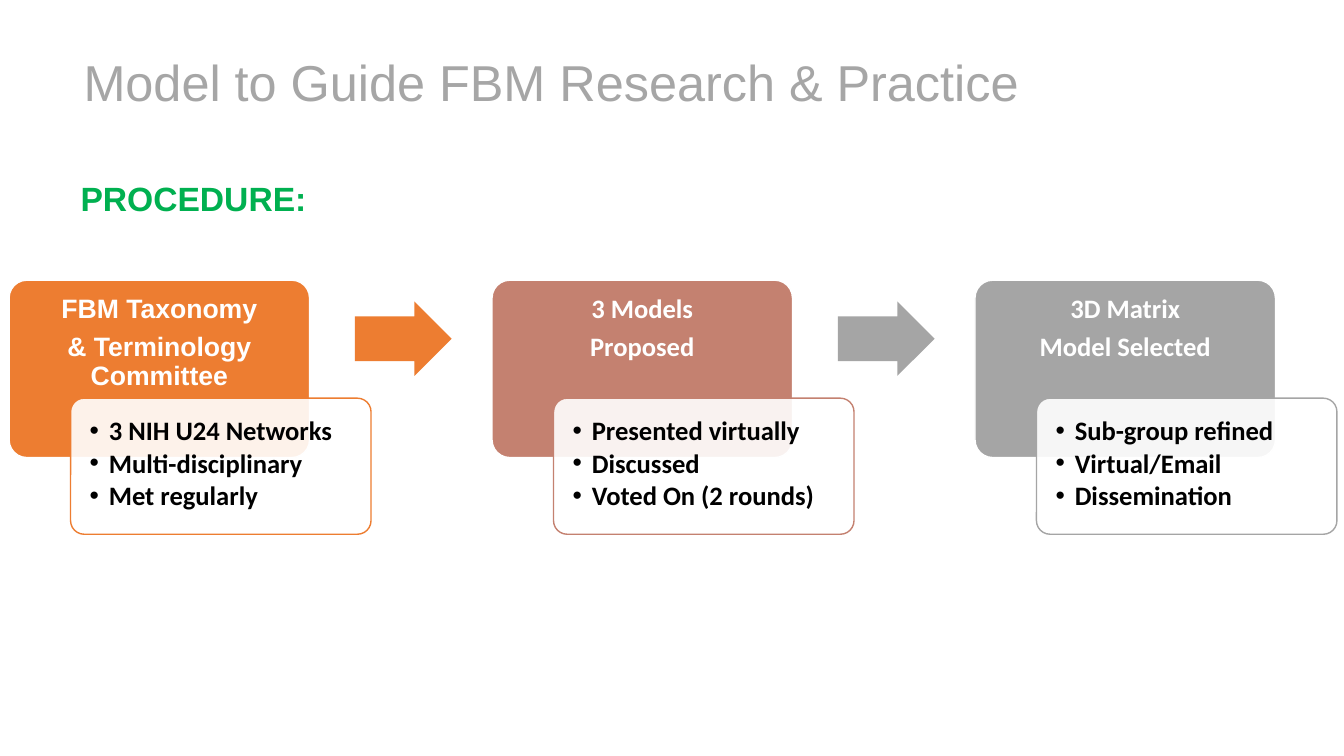
import pptx
import pptx.util
import pptx.dml.color
import pptx.enum.shapes
import pptx.enum.text
import pptx.oxml.ns
from lxml import etree

PX = 9144
SHAPES = pptx.enum.shapes.MSO_SHAPE
ALIGN = pptx.enum.text.PP_ALIGN
STAGE_STEP = 479
HEADING = dict(size=19, bold=True, color="FFFFFF")
DETAIL = dict(size=19, bold=True, color="000000", name="Calibri")
STAGES = [
    ("ED7D31", "Arial", ["FBM Taxonomy", "& Terminology Committee"],
     ["3 NIH U24 Networks", "Multi-disciplinary", "Met regularly"]),
    ("C48170", "Calibri", ["3 Models", "Proposed"],
     ["Presented virtually", "Discussed", "Voted On (2 rounds)"]),
    ("A5A5A5", "Calibri", ["3D Matrix", "Model Selected"],
     ["Sub-group refined", "Virtual/Email", "Dissemination"]),
]


def px(n):
    return pptx.util.Emu(n * PX)


def rgb(code):
    return pptx.dml.color.RGBColor.from_string(code)


def add_sub(parent, tag, **attrs):
    return etree.SubElement(parent, pptx.oxml.ns.qn(tag), attrs)


def add_bullet(p):
    pPr = p._p.get_or_add_pPr()
    pPr.set("marL", str(px(19)))
    pPr.set("indent", str(-px(19)))
    add_sub(pPr, "a:buFont", typeface="Arial")
    add_sub(pPr, "a:buChar", char="•")


def add_text(slide, box, lines, font, para, insets=(10, 5, 10, 5), bullets=False):
    tf = slide.shapes.add_textbox(*map(px, box)).text_frame
    tf.word_wrap = True
    for side, inset in zip(("left", "top", "right", "bottom"), insets):
        setattr(tf, f"margin_{side}", px(inset))
    for i, line in enumerate(lines):
        p = tf.paragraphs[0] if i == 0 else tf.add_paragraph()
        if bullets:
            add_bullet(p)
        for key, value in para.items():
            setattr(p, key, value)
        r = p.add_run()
        r.text = line
        formats = dict(font, size=pptx.util.Pt(font["size"]))
        r.font.color.rgb = rgb(formats.pop("color"))
        for key, value in formats.items():
            setattr(r.font, key, value)


def add_block(slide, kind, box, adjustments, fill, line=None, alpha=None):
    s = slide.shapes.add_shape(kind, *map(px, box))
    s.shadow.inherit = False
    for i, value in enumerate(adjustments):
        s.adjustments[i] = value
    s.fill.solid()
    s.fill.fore_color.rgb = rgb(fill)
    if alpha:
        color = s.element.xpath("./p:spPr/a:solidFill/a:srgbClr")[0]
        add_sub(color, "a:alpha", val=str(alpha * 1000))
    if line:
        s.line.color.rgb = rgb(line)
        s.line.width = pptx.util.Pt(1)
    else:
        s.line.fill.background()


def add_header(slide, x, y):
    add_text(slide, (x + 3, y, 985, 71), ["Model to Guide FBM Research & Practice"],
             dict(size=36, name="Arial", color="A6A6A6"), {})
    add_text(slide, (x, y + 120, 1141, 99), ["PROCEDURE:"],
             dict(size=24, name="Arial", color="00B050", bold=True),
             dict(line_spacing=1.15))


def add_stage(slide, x, y, color, heading_font, heading, details):
    add_block(slide, SHAPES.ROUNDED_RECTANGLE, (x, y, 298, 176), [0.1], color, "FFFFFF")
    add_text(slide, (x, y, 298, 117), heading, dict(HEADING, name=heading_font),
             dict(alignment=ALIGN.CENTER, line_spacing=0.9, space_after=pptx.util.Pt(7)),
             (15, 15, 15, 8))
    add_block(slide, SHAPES.ROUNDED_RECTANGLE, (x + 61, y + 117, 298, 135), [0.1],
              "FFFFFF", color, 90)
    add_text(slide, (x + 65, y + 121, 290, 127), details, DETAIL,
             dict(line_spacing=0.9, space_after=pptx.util.Pt(2.85)),
             (15, 15, 15, 15), bullets=True)


def add_process(slide, x, y):
    arrow_colors = ["ED7D31", "A5A5A5"]
    for i, stage in enumerate(STAGES):
        left = x + i * STAGE_STEP
        add_stage(slide, left, y, *stage)
        if i < len(arrow_colors):
            add_block(slide, SHAPES.RIGHT_ARROW, (left + 343, y + 21, 96, 74),
                      [0.6, 0.5], arrow_colors[i])


def main():
    prs = pptx.Presentation()
    prs.slide_width, prs.slide_height = px(1333), px(750)
    slide = prs.slides.add_slide(prs.slide_layouts[6])
    add_header(slide, 70, 46)
    add_process(slide, 9, 278)
    prs.save("out.pptx")


if __name__ == "__main__":
    main()
